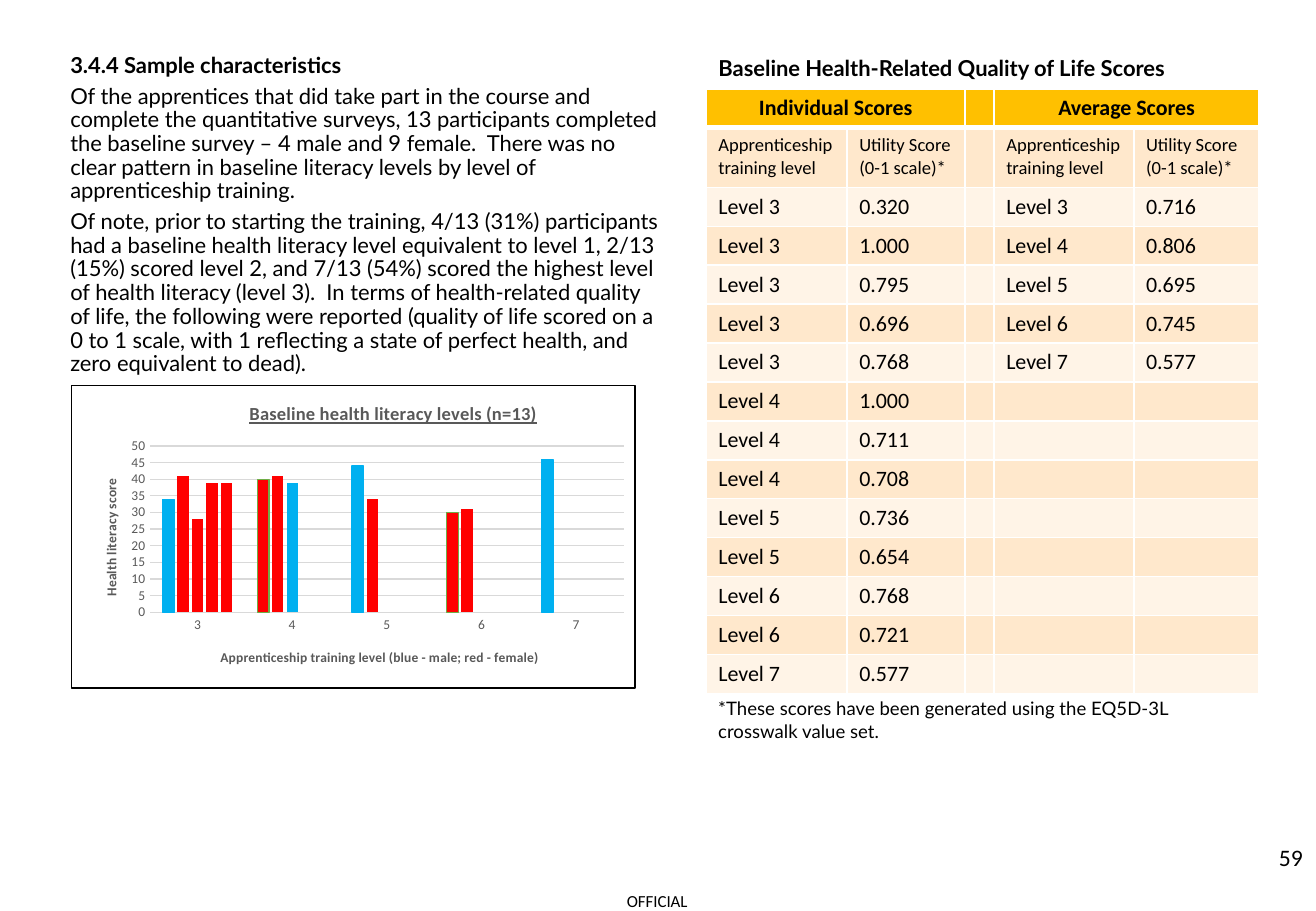
from dataclasses import dataclass
from itertools import zip_longest

from lxml.etree import SubElement
from pptx import Presentation
from pptx.chart.data import CategoryChartData
from pptx.dml.color import RGBColor
from pptx.enum.chart import XL_CHART_TYPE, XL_TICK_MARK
from pptx.enum.text import MSO_ANCHOR, MSO_AUTO_SIZE, PP_ALIGN
from pptx.oxml import parse_xml
from pptx.oxml.ns import nsdecls, qn
from pptx.util import Inches, Pt


@dataclass(frozen=True)
class Theme:
    text_font: str = "Lato"
    data_font: str = "Calibri"
    ink: str = "000000"
    paper: str = "FFFFFF"
    header: str = "FFC000"
    bands: tuple = ("FFE8CC", "FFF4E7")
    chart_text: str = "595959"
    chart_line: str = "D9D9D9"
    male: str = "00B0F0"
    female: str = "FF0000"
    edge: str = "70AD47"
    page_number: int = 14
    body: int = 13
    note: int = 11
    mark: int = 10
    axis: int = 8
    hairline: float = 0.75


class SlideBuilder:
    """Places elements on a grid of 24 columns by 24 rows."""

    def __init__(self, deck, theme):
        self.theme = theme
        self.slide = deck.slides.add_slide(deck.slide_layouts[1])
        self.column = deck.slide_width / 24
        self.row = deck.slide_height / 24

    def frame(self, left, top, width, height):
        return (int(left * self.column), int(top * self.row),
                int(width * self.column), int(height * self.row))

    def style(self, font, size, name, color=None, bold=False):
        font.size, font.name, font.bold = Pt(size), name, bold
        font.color.rgb = RGBColor.from_string(color or self.theme.ink)

    def fill_text(self, text_frame, text, size, name, bold=False, align=PP_ALIGN.LEFT):
        text_frame.text = text
        for para in text_frame.paragraphs:
            para.alignment = align
            for span in para.runs:
                self.style(span.font, size, name, bold=bold)

    def placeholder(self, index, place, text, bold=False, anchor=MSO_ANCHOR.TOP):
        box = self.slide.placeholders[index]
        box.left, box.top, box.width, box.height = self.frame(*place)
        box.text_frame.auto_size = MSO_AUTO_SIZE.NONE
        box.text_frame.vertical_anchor = anchor
        self.fill_text(box.text_frame, text, self.theme.body, self.theme.text_font, bold)
        return box

    def body(self, place, text):
        box = self.placeholder(1, place, text)
        for number, para in enumerate(box.text_frame.paragraphs):
            properties = para._p.get_or_add_pPr()
            properties.set("marL", "0")
            properties.set("indent", "0")
            SubElement(properties, qn("a:buNone"))
            para.line_spacing = 0.9
            para.space_before = Pt(4 if number else 0)
        box.text_frame.paragraphs[0].runs[0].font.bold = True

    def text(self, place, text, size, name, align=PP_ALIGN.LEFT,
             anchor=MSO_ANCHOR.TOP, wrap=True, inset=None):
        text_frame = self.slide.shapes.add_textbox(*self.frame(*place)).text_frame
        text_frame.word_wrap = wrap
        text_frame.vertical_anchor = anchor
        if inset is not None:
            text_frame.margin_left = text_frame.margin_right = inset
            text_frame.margin_top = text_frame.margin_bottom = inset
        self.fill_text(text_frame, text, size, name, align=align)

    # Table
    def cell(self, cell, text, fill, size, header):
        cell.fill.solid()
        cell.fill.fore_color.rgb = RGBColor.from_string(fill)
        if text:
            self.fill_text(cell.text_frame, text, size, self.theme.data_font, header,
                           PP_ALIGN.CENTER if header else PP_ALIGN.LEFT)
        else:
            cell.text_frame.paragraphs[0]._p.get_or_add_endParaRPr().set("sz", str(size * 100))
        properties = cell._tc.get_or_add_tcPr()
        for position, side in enumerate("LRTB"):
            width = Pt(3 if header and side == "B" else 1)
            properties.insert(position, parse_xml(
                f'<a:ln{side} {nsdecls("a")} w="{width}"><a:solidFill>'
                f'<a:srgbClr val="{self.theme.paper}"/></a:solidFill></a:ln{side}>'))

    def table(self, place, columns, row_heights, rows, merges):
        table = self.slide.shapes.add_table(
            len(rows), len(columns), *self.frame(*place)).table
        for column, width in zip(table.columns, columns):
            column.width = int(width * self.column)
        for number, (row, height, texts) in enumerate(zip(table.rows, row_heights, rows)):
            row.height = int(height * self.row)
            fill = self.theme.bands[(number + 1) % 2] if number else self.theme.header
            size = self.theme.note if number == 1 else self.theme.body
            for cell, text in zip(row.cells, texts):
                self.cell(cell, text, fill, size, header=number == 0)
        for first, last in merges:
            table.cell(0, first).merge(table.cell(0, last))

    # Chart
    def chart_layout(self, parent, position, x, y, size=None):
        for old in parent.findall(qn("c:layout")):
            parent.remove(old)
        layout = parse_xml(f'<c:layout {nsdecls("c")}><c:manualLayout/></c:layout>')
        values = [("xMode", "edge"), ("yMode", "edge"), ("x", x), ("y", y)]
        if size:
            values = [("layoutTarget", "inner"), *values, ("w", size[0]), ("h", size[1])]
        for name, value in values:
            SubElement(layout[0], qn(f"c:{name}")).set("val", str(value))
        parent.insert(position, layout)

    def chart_title(self, title, text, size, x, y):
        title.text_frame.text = text
        span = title.text_frame.paragraphs[0].runs[0]
        self.style(span.font, size, self.theme.data_font, self.theme.chart_text, True)
        self.chart_layout(title._element, 1, x, y)
        return title.text_frame, span

    def line(self, line, color):
        line.color.rgb = RGBColor.from_string(color)
        line.width = Pt(self.theme.hairline)

    def chart(self, place, scores):
        theme = self.theme
        data = CategoryChartData()
        data.categories = list(scores)
        series_scores = list(zip_longest(*scores.values()))
        for number, entries in enumerate(series_scores, 1):
            data.add_series(f"Series {number}", [entry and entry[0] for entry in entries])
        chart = self.slide.shapes.add_chart(
            XL_CHART_TYPE.COLUMN_CLUSTERED, *self.frame(*place), data).chart
        chart.has_legend = False
        self.style(chart.font, theme.mark, theme.data_font)
        plot = chart.plots[0]
        plot.gap_width, plot.overlap, plot.vary_by_categories = 219, -27, False

        for number, (series, entries) in enumerate(zip(plot.series, series_scores)):
            for index, entry in enumerate(entries):
                if entry:
                    color = theme.male if entry[1] == "male" else theme.female
                    bar = series.points[index].format
                    bar.fill.solid()
                    bar.fill.fore_color.rgb = RGBColor.from_string(color)
                    if number == 0:
                        self.line(bar.line, theme.male if entry[1] == "male" else theme.edge)

        levels, values = chart.category_axis, chart.value_axis
        for axis in (levels, values):
            axis.major_tick_mark = axis.minor_tick_mark = XL_TICK_MARK.NONE
            self.style(axis.tick_labels.font, theme.axis, theme.data_font, theme.chart_text)
        values.minimum_scale, values.maximum_scale, values.major_unit = 0, 50, 5
        self.line(values.major_gridlines.format.line, theme.chart_line)
        self.line(levels.format.line, theme.chart_line)
        values.format.line.fill.background()

        _, span = self.chart_title(
            chart.chart_title, "Baseline health literacy levels (n=13)", theme.note, 0.31, 0.04)
        span.font.underline = True
        self.chart_title(levels.axis_title, "Apprenticeship training level (blue - male; red - female)",
                         theme.axis, 0.26, 0.86)
        text_frame, _ = self.chart_title(
            values.axis_title, "Health literacy score", theme.axis, 0.05, 0.3)
        text_frame._txBody.bodyPr.set("rot", "-5400000")
        space = chart._chartSpace
        self.chart_layout(space.chart.plotArea, 0, 0.14, 0.2, (0.84, 0.55))
        space.chart.addnext(parse_xml(
            f'<c:spPr {nsdecls("c", "a")}><a:noFill/><a:ln w="{Pt(theme.hairline)}"><a:solidFill>'
            f'<a:srgbClr val="{theme.ink}"/></a:solidFill></a:ln></c:spPr>'))


SAMPLE_TEXT = "\n".join([
    "3.4.4 Sample characteristics",
    "Of the apprentices that did take part in the course and complete the quantitative surveys, 13 participants completed the baseline survey – 4 male and 9 female.  There was no clear pattern in baseline literacy levels by level of apprenticeship training.",
    "Of note, prior to starting the training, 4/13 (31%) participants had a baseline health literacy level equivalent to level 1, 2/13 (15%) scored level 2, and 7/13 (54%) scored the highest level of health literacy (level 3).  In terms of health-related quality of life, the following were reported (quality of life scored on a 0 to 1 scale, with 1 reflecting a state of perfect health, and zero equivalent to dead).",
])
LITERACY = {
    "3": [(34, "male"), (41, "female"), (28, "female"), (39, "female"), (39, "female")],
    "4": [(40, "female"), (41, "female"), (39, "male")],
    "5": [(44, "male"), (34, "female")],
    "6": [(30, "female"), (31, "female")],
    "7": [(46, "male")],
}
UTILITY = {
    3: ["0.320", "1.000", "0.795", "0.696", "0.768"],
    4: ["1.000", "0.711", "0.708"],
    5: ["0.736", "0.654"],
    6: ["0.768", "0.721"],
    7: ["0.577"],
}
AVERAGES = ["0.716", "0.806", "0.695", "0.745", "0.577"]


def main():
    deck = Presentation()
    deck.slide_width, deck.slide_height = Inches(10.83), Inches(7.5)
    theme = Theme()
    page = SlideBuilder(deck, theme)

    # Sample description and literacy chart
    page.body((1.06, 1.28, 11.24, 9.34), SAMPLE_TEXT)
    page.chart((1.29, 10.14, 10.3, 8), LITERACY)

    # Quality of life scores
    page.placeholder(0, (12.88, 1.28, 9.6, 1.02), "Baseline Health-Related Quality of Life Scores",
                     bold=True, anchor=MSO_ANCHOR.MIDDLE)
    individual = [(f"Level {level}", score) for level, scores in UTILITY.items() for score in scores]
    average = [(f"Level {level}", score) for level, score in zip(UTILITY, AVERAGES)]
    labels = ("Apprenticeship training level", "Utility Score\n(0-1 scale)*")
    rows = [("Individual Scores", "", "", "Average Scores", ""), (*labels, "", *labels)]
    rows += [(*left, "", *right)
             for left, right in zip_longest(individual, average, fillvalue=("", ""))]
    heights = [1.01, 1.57] + [1.01] * len(individual)
    page.table((12.88, 2.34, 10.08, 15.74), (2.57, 2.15, 0.53, 2.55, 2.28), heights, rows,
               merges=[(0, 1), (3, 4)])
    page.text((12.88, 18.21, 10.06, 1.5),
              "*These scores have been generated using the EQ5D-3L crosswalk value set.",
              theme.note, theme.text_font)

    # Page marks
    page.text((18.57, 21.95, 5.41, 1.28), "59", theme.page_number, theme.data_font,
              PP_ALIGN.RIGHT, MSO_ANCHOR.MIDDLE)
    page.text((11.43, 23.46, 1.17, 0.54), "OFFICIAL", theme.mark, theme.data_font,
              wrap=False, inset=0)
    deck.save("out.pptx")


if __name__ == "__main__":
    main()
